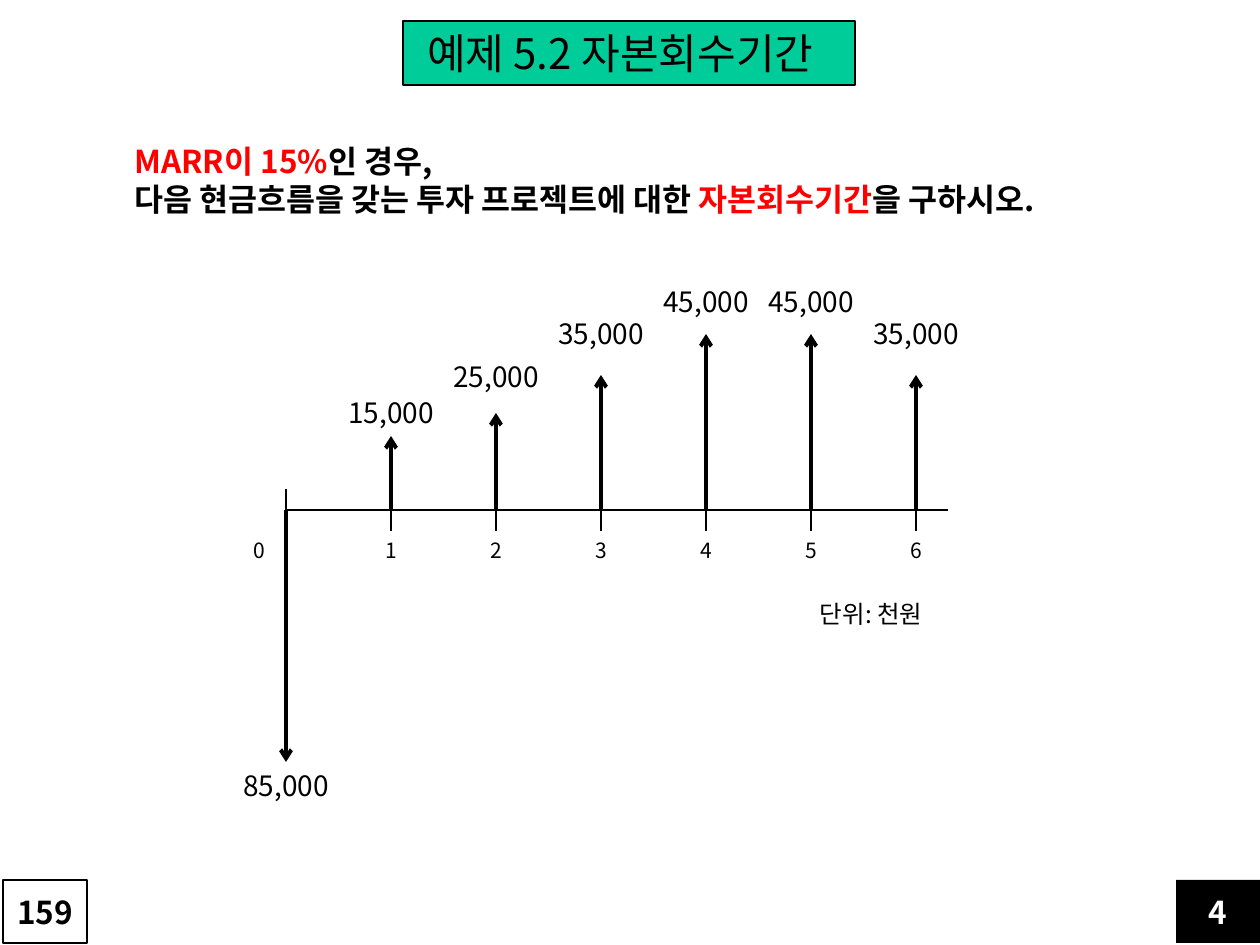
"""Build the payback period example slide with its cash flow diagram."""
from lxml.etree import SubElement
from pptx import Presentation
from pptx.dml.color import RGBColor
from pptx.enum.shapes import MSO_CONNECTOR, MSO_SHAPE
from pptx.enum.text import MSO_ANCHOR, MSO_AUTO_SIZE, PP_ALIGN
from pptx.oxml.ns import qn
from pptx.util import Emu, Pt

PX = 914400 / 126
FONT = "Noto Sans CJK KR"
BLACK, WHITE, RED, GREEN = "000000", "FFFFFF", "FF0000", "00CC99"
START, STEP, AXIS, TICK = 286, 105, 510, 21
CASH_FLOWS = [
    ("85,000", 762, 762),
    ("15,000", 436, 389),
    ("25,000", 413, 353),
    ("35,000", 375, 310),
    ("45,000", 334, 278),
    ("45,000", 334, 278),
    ("35,000", 375, 310),
]
QUESTION = [
    [("MARR이 15%", RED), ("인 경우,", BLACK)],
    [("다음 현금흐름을 갖는 투자 프로젝트에 대한 ", BLACK),
     ("자본회수기간", RED), ("을 구하시오.", BLACK)],
]


def px(*lengths):
    return [Emu(round(length * PX)) for length in lengths]


def color(value):
    return RGBColor.from_string(value)


def apply_format(target, values):
    for name, value in values.items():
        setattr(target, name, value)


def write(shape, lines, size, bold=False, align=PP_ALIGN.CENTER, **frame_format):
    frame = shape.text_frame
    apply_format(frame, {"word_wrap": False,
                         "auto_size": MSO_AUTO_SIZE.SHAPE_TO_FIT_TEXT,
                         "vertical_anchor": MSO_ANCHOR.TOP, **frame_format})
    for index, pieces in enumerate(lines):
        paragraph = frame.add_paragraph() if index else frame.paragraphs[0]
        paragraph.alignment = align
        for text, ink in pieces:
            run = paragraph.add_run()
            run.text = text
            apply_format(run.font, {"name": FONT, "size": Pt(size), "bold": bold})
            run.font.color.rgb = color(ink)
            SubElement(run.font._element, qn("a:ea"), typeface=FONT)


def add_text(slide, box, lines, size, **text_format):
    write(slide.shapes.add_textbox(*px(*box)), lines, size, **text_format)


def add_box(slide, box, fill, outline, text, ink, size, **text_format):
    panel = slide.shapes.add_shape(MSO_SHAPE.RECTANGLE, *px(*box))
    panel.shadow.inherit = False
    panel.fill.solid()
    panel.fill.fore_color.rgb = color(fill)
    if outline:
        panel.line.color.rgb = color(outline)
        panel.line.width = Pt(0.75)
    else:
        panel.line.fill.background()
    write(panel, [[(text, ink)]], size, **text_format)


def add_line(slide, ends, width=0.75, arrow=False):
    connector = slide.shapes.add_connector(MSO_CONNECTOR.STRAIGHT, *px(*ends))
    connector.line.color.rgb = color(BLACK)
    connector.line.width = Pt(width)
    if arrow:
        SubElement(connector.line._get_or_add_ln(), qn("a:tailEnd"), type="arrow")
    SubElement(connector._element.spPr, qn("a:effectLst"))


def add_cash_flow(slide, year, amount, tip, label_top):
    x = START + STEP * year
    year_x = x if year else x - 27
    add_line(slide, (x, AXIS - TICK, x, AXIS + TICK))
    add_text(slide, (year_x - 18, AXIS + TICK, 36, 38), [[(str(year), BLACK)]], 12)
    add_line(slide, (x, AXIS, x, tip), width=2.25, arrow=True)
    add_text(slide, (x - 60, label_top, 120, 47), [[(amount, BLACK)]], 16)


def main():
    deck = Presentation()
    deck.slide_width, deck.slide_height = px(1260, 945)
    slide = deck.slides.add_slide(deck.slide_layouts[6])

    add_box(slide, (403, 21, 452, 64), GREEN, BLACK,
            "예제 5.2 자본회수기간", BLACK, 24, margin_right=px(30)[0])
    add_text(slide, (122, 136, 1075, 89), QUESTION, 18, bold=True,
             align=PP_ALIGN.LEFT, word_wrap=True)

    add_line(slide, (START, AXIS, 948, AXIS))
    for year, cash_flow in enumerate(CASH_FLOWS):
        add_cash_flow(slide, year, *cash_flow)
    add_text(slide, (746, 593, 189, 42), [[("단위: 천원", BLACK)]], 14,
             align=PP_ALIGN.RIGHT, word_wrap=True)

    page_format = {"bold": True, "word_wrap": True,
                   "auto_size": MSO_AUTO_SIZE.NONE,
                   "vertical_anchor": MSO_ANCHOR.MIDDLE}
    add_box(slide, (1176, 880, 84, 63), BLACK, None, "4", WHITE, 18, **page_format)
    add_box(slide, (3, 880, 84, 63), WHITE, BLACK, "159", BLACK, 18, **page_format)
    deck.save("out.pptx")


if __name__ == "__main__":
    main()
